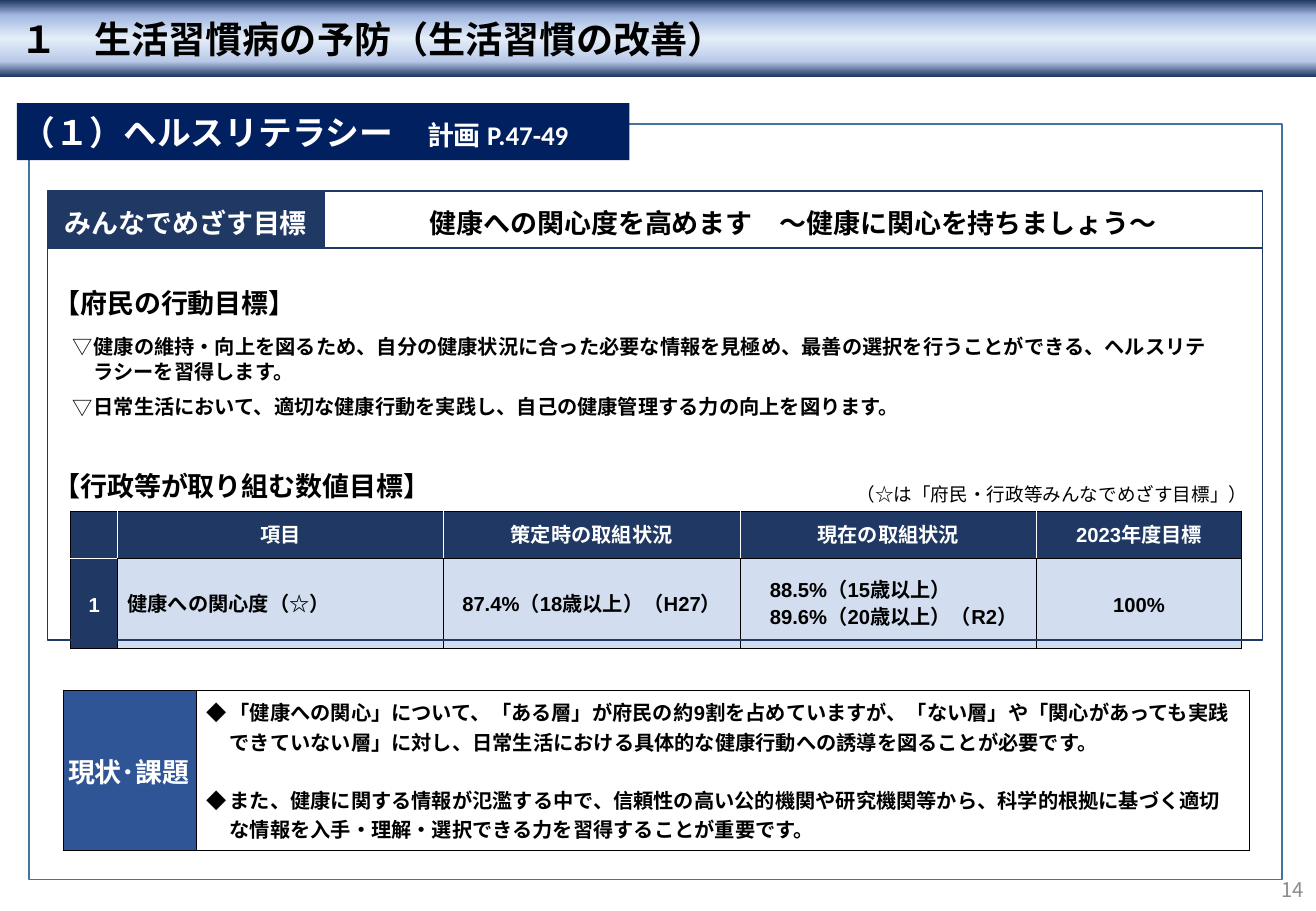
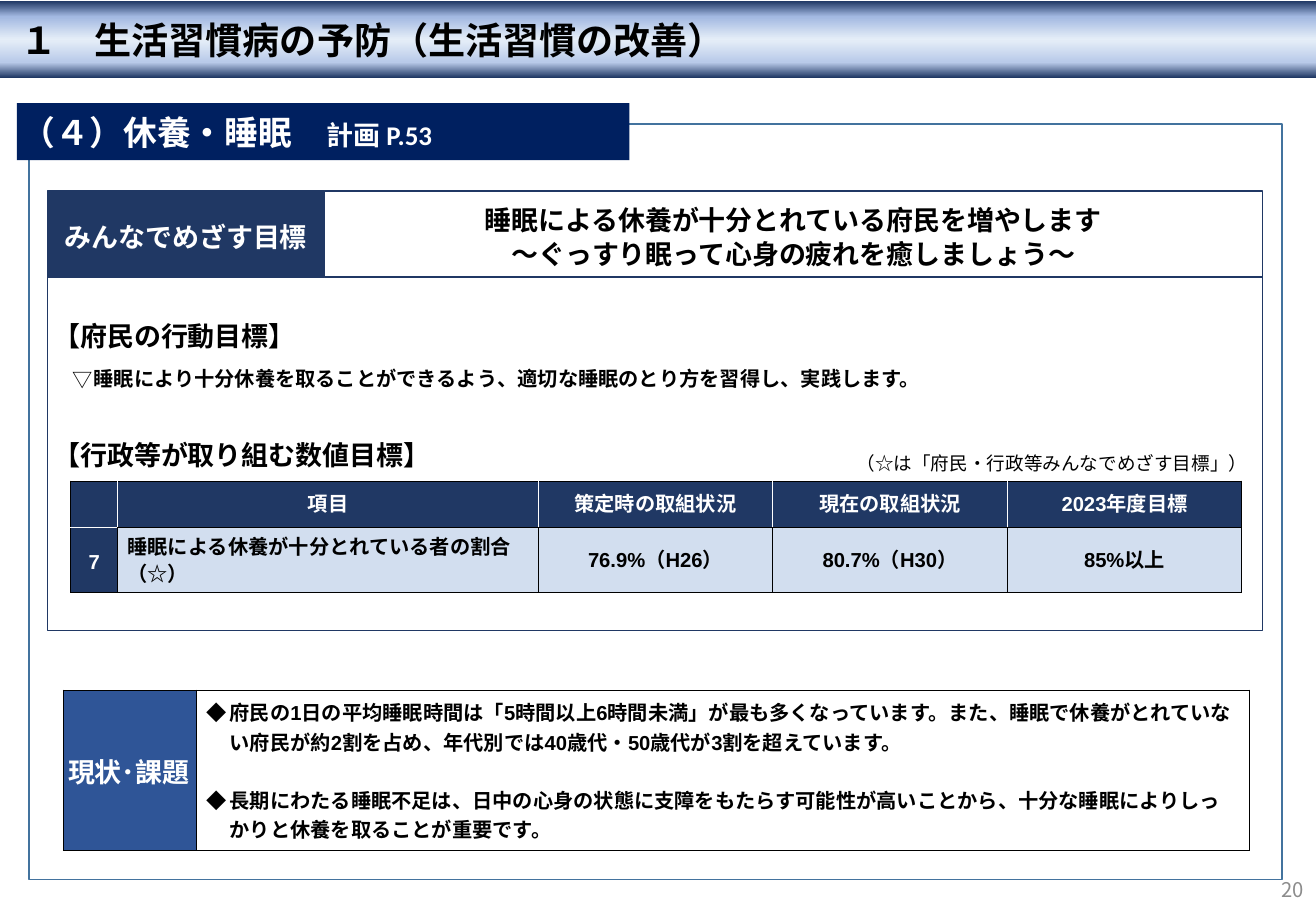
import dataclasses

import lxml.etree
import pptx
import pptx.dml.color
import pptx.enum.shapes
import pptx.enum.text
import pptx.oxml.ns
import pptx.util

Inches = pptx.util.Inches
Pt = pptx.util.Pt
qn = pptx.oxml.ns.qn
RGB = pptx.dml.color.RGBColor.from_string
Align = pptx.enum.text.PP_ALIGN
MIDDLE = pptx.enum.text.MSO_ANCHOR.MIDDLE
TOP = pptx.enum.text.MSO_ANCHOR.TOP


@dataclasses.dataclass(frozen=True)
class Theme:
    white: str = "FFFFFF"
    black: str = "000000"
    navy: str = "203864"
    deep: str = "002060"
    blue: str = "2F5597"
    edge: str = "43739E"
    pale: str = "D2DEEF"
    gray: str = "8C8C8C"
    sheen: tuple = ((0, "203864"), (20, "A2B8E1"), (50, "E5EEF8"), (80, "B9CAE9"), (100, "203864"))
    sans: str = "Arial"
    soft: str = "Calibri"
    asian: str = "Noto Sans CJK JP"
    title: int = 22
    large: int = 20
    head: int = 16
    body: int = 12
    note: int = 11


T = Theme()
SLIM = (0.04, 0.08, 0.04, 0.04)
WIDE = (0.08, 0.08, 0.08, 0.04)


class Deck:
    def __init__(self):
        self.file = pptx.Presentation()
        self.file.slide_width = Inches(10.83)
        self.file.slide_height = Inches(7.5)
        self.slide = None

    def start(self):
        self.slide = self.file.slides.add_slide(self.file.slide_layouts[1])

    def place(self, shape, box):
        shape.left, shape.top, shape.width, shape.height = map(Inches, box)

    def frame(self, frame, inset, anchor=MIDDLE):
        frame.word_wrap = True
        frame.auto_size = pptx.enum.text.MSO_AUTO_SIZE.NONE
        frame.vertical_anchor = anchor
        frame.margin_left, frame.margin_top, frame.margin_right, frame.margin_bottom = map(Inches, inset)

    def words(self, frame, lines, size=T.body, color=T.black, font=T.sans, bold=True,
              align=Align.LEFT, lead=None, gap=0, mark=None, hang=0):
        for i, line in enumerate(lines):
            par = frame.paragraphs[0] if i == 0 else frame.add_paragraph()
            par.alignment = align
            par.space_before = Pt(gap if i else 0)
            if lead:
                par.line_spacing = Pt(lead)
            if mark:
                self.bullet(par, mark, hang)
            for text, pts in [(line, size)] if isinstance(line, str) else line:
                run = par.add_run()
                run.text = text
                run.font.size = Pt(pts)
                run.font.bold = bold
                run.font.color.rgb = RGB(color)
                run.font.name = font
                lxml.etree.SubElement(run._r.get_or_add_rPr(), qn("a:ea"), typeface=T.asian)

    def bullet(self, par, mark, hang):
        props = par._p.get_or_add_pPr()
        props.set("marL", str(Inches(hang)))
        props.set("indent", str(-Inches(hang)))
        lxml.etree.SubElement(props, qn("a:buFont"), typeface=T.asian)
        lxml.etree.SubElement(props, qn("a:buChar"), char=mark)

    def title(self, text, top):
        bar = self.slide.shapes.title
        self.place(bar, (0, top, 10.83, 0.63))
        bar.fill.gradient()
        bar.fill.gradient_angle = 270
        stops = bar._element.spPr.find(".//" + qn("a:gsLst"))
        stops.clear()
        for spot, color in T.sheen:
            stop = lxml.etree.SubElement(stops, qn("a:gs"), pos=str(spot * 1000))
            lxml.etree.SubElement(stop, qn("a:srgbClr"), val=color)
        self.frame(bar.text_frame, (0.1, 0.05, 0.1, 0.05))
        self.words(bar.text_frame, [text], T.title)

    def rect(self, box, fill=None, line=None, lines=(), inset=WIDE, **style):
        shape = self.slide.shapes.add_shape(
            pptx.enum.shapes.MSO_SHAPE.RECTANGLE, *map(Inches, box))
        shape.shadow.inherit = False
        if fill:
            shape.fill.solid()
            shape.fill.fore_color.rgb = RGB(fill)
        else:
            shape.fill.background()
        if line:
            shape.line.color.rgb = RGB(line)
            shape.line.width = Pt(1)
        else:
            shape.line.fill.background()
        if lines:
            self.frame(shape.text_frame, inset)
            self.words(shape.text_frame, lines, lead=20, font=T.soft, **style)

    def text(self, box, text, inset=SLIM, **style):
        shape = self.slide.shapes.add_textbox(*map(Inches, box))
        self.frame(shape.text_frame, inset)
        self.words(shape.text_frame, [text], **style)

    def list(self, box, lines):
        shape = self.slide.placeholders[1]
        self.place(shape, box)
        shape._element.getparent().append(shape._element)
        self.frame(shape.text_frame, (0.04, 0.08, 0.2, 0.04), TOP)
        self.words(shape.text_frame, lines, lead=15, gap=6, mark="▽", hang=0.17)

    def grid(self, left, top, cols, rows):
        table = self.slide.shapes.add_table(
            len(rows), len(cols), Inches(left), Inches(top),
            Inches(sum(cols)), Inches(sum(rows))).table
        table.first_row = table.horz_banding = False
        for col, width in zip(table.columns, cols):
            col.width = Inches(width)
        for row, height in zip(table.rows, rows):
            row.height = Inches(height)
        return table

    def cell(self, cell, lines, fill, inset, light="", **style):
        cell.fill.solid()
        cell.fill.fore_color.rgb = RGB(fill)
        cell.vertical_anchor = MIDDLE
        cell.margin_left, cell.margin_top, cell.margin_right, cell.margin_bottom = map(Inches, inset)
        self.words(cell.text_frame, lines, **style)
        props = cell._tc.get_or_add_tcPr()
        for i, side in enumerate("LRTB"):
            line = lxml.etree.Element(qn("a:ln" + side), w=str(Pt(0.5)))
            paint = lxml.etree.SubElement(line, qn("a:solidFill"))
            lxml.etree.SubElement(paint, qn("a:srgbClr"), val=T.white if side in light else T.black)
            props.insert(i, line)

    def target(self, top, cols, row):
        names = ["", "項目", "策定時の取組状況", "現在の取組状況", "2023年度目標"]
        table = self.grid(0.58, top, cols, (0.31, 0.53))
        last = len(cols) - 1
        base = dict(inset=(0.08, 0.04, 0.08, 0.04), lead=16)
        for i, (name, item) in enumerate(zip(names, row)):
            light = ("L" if i else "B") + ("R" if i < last else "")
            self.cell(table.cell(0, i), [name] if name else [], T.navy, light=light,
                      color=T.white, align=Align.CENTER, **base)
            lines = [item] if isinstance(item, str) else item
            left = i == 1 or len(lines) > 1
            self.cell(table.cell(1, i), lines, T.pale if i else T.navy, light="" if i else "T",
                      color=T.black if i else T.white,
                      align=Align.LEFT if left else Align.CENTER, **base)

    def issue(self, lines):
        table = self.grid(0.52, 5.68, (1.1, 8.66), (1.32,))
        self.cell(table.cell(0, 0), ["現状･課題"], T.blue, (0.04, 0.06, 0.04, 0.06),
                  size=T.head, color=T.white)
        self.cell(table.cell(0, 1), lines, T.white, (0.08, 0.06, 0.08, 0.06),
                  gap=17, mark="◆", hang=0.19)

    def page(self, num, bar, name, pages, goal, tall, act, deeds, deep, aim, cols, row, low, issues):
        self.start()
        self.title(" １　生活習慣病の予防（生活習慣の改善）", bar)
        self.text((10.04, 7.2, 0.79, 0.24), num, (0.1, 0.05, 0.1, 0.05), color=T.gray,
                  font=T.asian, bold=False, align=Align.RIGHT)
        self.rect((0.24, 1.02, 10.31, 6.22), T.white, T.edge)
        self.rect((0.14, 0.85, 5.04, 0.47), T.deep,
                  lines=[[(name + "　", T.large), ("計画 " + pages, T.head)]],
                  inset=(0.04, 0.1, 0.04, 0.04), color=T.white)
        for top, head in ((act, "【府民の行動目標】"), (aim, "【行政等が取り組む数値目標】")):
            self.text((0.4, top, 3.54, 0.31), head, size=T.head)
        self.list((0.56, act + 0.34, 9.69, deep), deeds)
        self.target(aim + 0.39, cols, row)
        self.text((6.61, aim + 0.07, 3.7, 0.31), "（☆は「府民・行政等みんなでめざす目標」）",
                  size=T.note, bold=False, align=Align.RIGHT)
        self.issue(issues)
        self.rect((0.39, 2.04, 10, low - 2.04), line=T.navy)
        for left, width, fill, color, lines in (
                (0.39, 2.28, T.navy, T.white, ["みんなでめざす目標"]),
                (2.67, 7.72, T.white, T.black, goal)):
            self.rect((left, 1.57, width, tall), fill, T.navy, lines,
                      size=T.head, color=color, align=Align.CENTER)


def main():
    deck = Deck()
    deck.page(
        num="14", bar=0, name="（１）ヘルスリテラシー", pages="P.47-49",
        goal=["健康への関心度を高めます　～健康に関心を持ちましょう～"], tall=0.47,
        act=2.32, deep=0.79,
        deeds=["健康の維持・向上を図るため、自分の健康状況に合った必要な情報を見極め、最善の選択を行うことができる、ヘルスリテラシーを習得します。",
               "日常生活において、適切な健康行動を実践し、自己の健康管理する力の向上を図ります。"],
        aim=3.82, cols=(0.39, 2.68, 2.44, 2.44, 1.69),
        row=["1", "健康への関心度（☆）", "87.4%（18歳以上）（H27）",
             ["　88.5%（15歳以上）", "　89.6%（20歳以上）（R2）"], "100%"],
        low=5.27,
        issues=["「健康への関心」について、「ある層」が府民の約9割を占めていますが、「ない層」や「関心があっても実践できていない層」に対し、日常生活における具体的な健康行動への誘導を図ることが必要です。",
                "また、健康に関する情報が氾濫する中で、信頼性の高い公的機関や研究機関等から、科学的根拠に基づく適切な情報を入手・理解・選択できる力を習得することが重要です。"])
    deck.page(
        num="20", bar=0.01, name="（４）休養・睡眠", pages="P.53",
        goal=["睡眠による休養が十分とれている府民を増やします", "～ぐっすり眠って心身の疲れを癒しましょう～"], tall=0.71,
        act=2.59, deep=0.55,
        deeds=["睡眠により十分休養を取ることができるよう、適切な睡眠のとり方を習得し、実践します。"],
        aim=3.57, cols=(0.39, 3.46, 1.93, 1.93, 1.93),
        row=["7", "睡眠による休養が十分とれている者の割合（☆）", "76.9%（H26）", "80.7%（H30）", "85%以上"],
        low=5.19,
        issues=["府民の1日の平均睡眠時間は「5時間以上6時間未満」が最も多くなっています。また、睡眠で休養がとれていない府民が約2割を占め、年代別では40歳代・50歳代が3割を超えています。",
                "長期にわたる睡眠不足は、日中の心身の状態に支障をもたらす可能性が高いことから、十分な睡眠によりしっかりと休養を取ることが重要です。"])
    deck.file.save("out.pptx")


if __name__ == "__main__":
    main()
